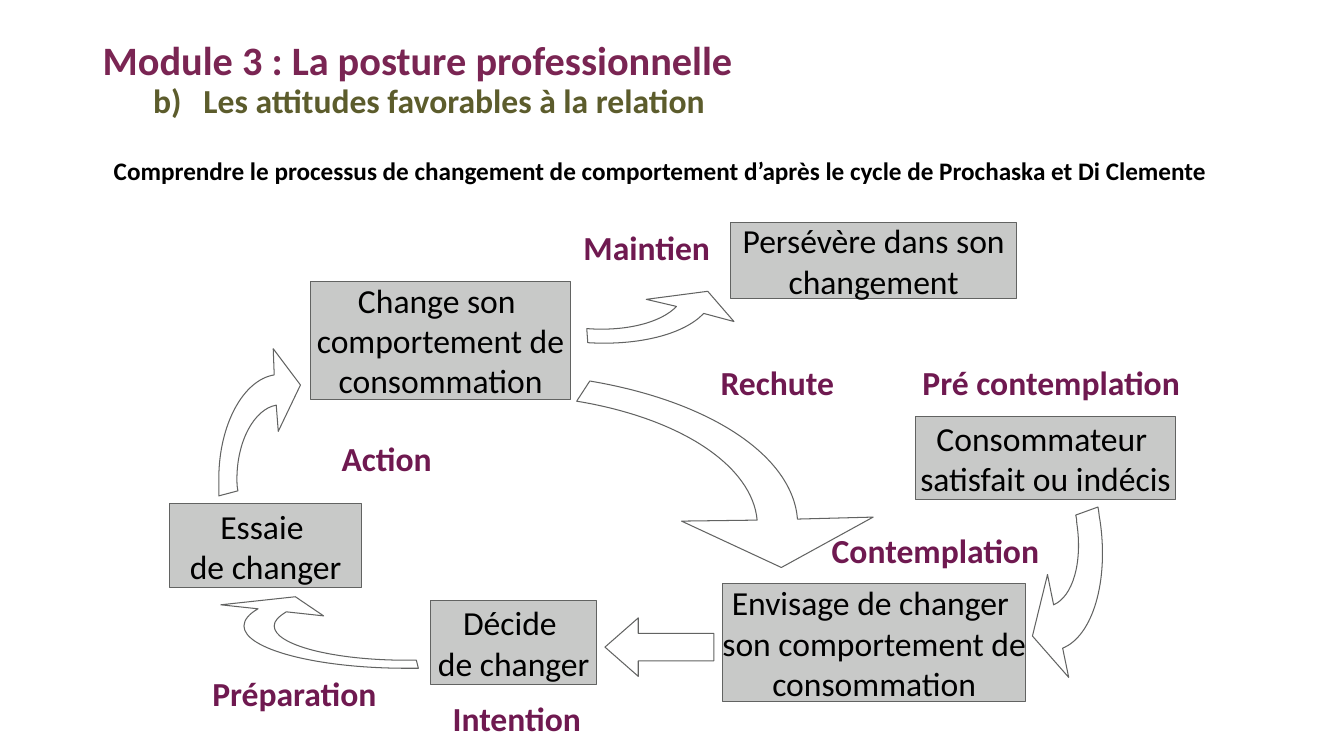
from dataclasses import dataclass

from lxml import etree
from pptx import Presentation
from pptx.dml.color import RGBColor
from pptx.enum.shapes import MSO_SHAPE
from pptx.enum.text import MSO_ANCHOR, MSO_AUTO_SIZE, PP_ALIGN
from pptx.oxml.ns import qn
from pptx.util import Inches, Pt

RECTANGLE = MSO_SHAPE.RECTANGLE
LEFT_ARROW = MSO_SHAPE.LEFT_ARROW
TOP = MSO_ANCHOR.TOP
MIDDLE = MSO_ANCHOR.MIDDLE
CENTER = PP_ALIGN.CENTER
LEFT = PP_ALIGN.LEFT
GROW = MSO_AUTO_SIZE.SHAPE_TO_FIT_TEXT
FIXED = MSO_AUTO_SIZE.NONE

FONT = "Calibri"
COLORS = {
    "box": "C8C9C8",
    "outline": "626362",
    "white": "FFFFFF",
    "black": "000000",
    "stage": "6F1950",
    "title": "7A2553",
    "subtitle": "5C5C2C",
}


@dataclass(frozen=True)
class StateBox:
    left: float
    top: float
    width: float
    height: float
    paragraphs: tuple[str, ...]


@dataclass(frozen=True)
class Label:
    left: float
    top: float
    width: float
    height: float
    text: str
    color: str = "stage"
    size: float = 24
    alignment: PP_ALIGN = CENTER
    anchor: MSO_ANCHOR = MIDDLE
    wrap: bool = False
    auto_size: MSO_AUTO_SIZE = FIXED
    line_spacing: float | None = None


@dataclass(frozen=True)
class CurvedArrow:
    start: tuple[float, float]
    steps: tuple[tuple[float, ...], ...]
    fill: str | None = "white"


STATE_BOXES = (
    StateBox(9.08, 4.13, 2.58, 0.83, ("Consommateur ", "satisfait ou indécis")),
    StateBox(7.17, 5.79, 3, 1.17,
             ("Envisage de changer ", "son comportement de", "consommation")),
    StateBox(4.27, 5.96, 1.65, 0.83, ("Décide \vde changer",)),
    StateBox(1.68, 5, 1.91, 0.83, ("Essaie \vde changer",)),
    StateBox(3.08, 2.79, 2.58, 1.17,
             ("Change son ", "comportement de", "consommation")),
    StateBox(7.25, 2.21, 2.83, 0.75, ("Persévère dans son", "changement")),
)

CURVED_ARROWS = (
    CurvedArrow((10.45, 6), (
        (10.64, 5.92, 10.74, 5.58, 10.68, 5.19),
        (10.68, 5.17, 10.68, 5.14, 10.67, 5.11),
        (10.89, 5.03),
        (10.9, 5.07, 10.9, 5.12, 10.91, 5.16),
        (11, 5.76, 10.84, 6.31, 10.54, 6.43),
        (10.6, 6.72), (10.24, 6.31), (10.39, 5.7),
    ), fill=None),
    CurvedArrow((2.84, 6.07), (
        (2.76, 6.12, 2.72, 6.16, 2.72, 6.21),
        (2.72, 6.4, 3.31, 6.55, 4.03, 6.55),
        (4.07, 6.55, 4.1, 6.55, 4.13, 6.55),
        (4.15, 6.63),
        (4.11, 6.63, 4.07, 6.63, 4.03, 6.63),
        (3.14, 6.63, 2.42, 6.44, 2.42, 6.21),
        (2.42, 6.15, 2.47, 6.09, 2.56, 6.04),
        (2.19, 6), (2.93, 5.92), (3.21, 6.11),
    )),
    CurvedArrow((2.74, 4.02), (
        (2.52, 4.06, 2.35, 4.38, 2.35, 4.75),
        (2.35, 4.79, 2.35, 4.83, 2.36, 4.87),
        (2.17, 4.92),
        (2.17, 4.86, 2.17, 4.81, 2.17, 4.75),
        (2.17, 4.22, 2.41, 3.77, 2.72, 3.72),
        (2.71, 3.46), (2.98, 3.82), (2.76, 4.28),
    )),
    CurvedArrow((7.51, 5.16), (
        (7.46, 4.62, 6.75, 4.15, 5.72, 3.98),
        (5.85, 3.78),
        (7.04, 3.98, 7.86, 4.52, 7.91, 5.15),
        (8.66, 5.13), (7.75, 5.63), (6.76, 5.17),
    )),
    CurvedArrow((6.71, 3.04), (
        (6.56, 3.2, 6.21, 3.29, 5.82, 3.26),
        (5.83, 3.4),
        (6.33, 3.43, 6.78, 3.32, 6.98, 3.11),
        (7.28, 3.19), (7.02, 2.89), (6.41, 2.97),
    )),
)

STAGE_LABELS = (
    Label(6.25, 3.63, 2.92, 0.33, "Rechute"),
    Label(7.82, 5.29, 2.84, 0.33, " Contemplation"),
    Label(4.42, 6.96, 1.41, 0.33, "Intention"),
    Label(1.92, 6.71, 2, 0.33, "Préparation"),
    Label(2.93, 4.38, 1.81, 0.33, "Action"),
    Label(5.75, 2.29, 1.33, 0.33, "Maintien"),
    Label(9.05, 3.54, 3.45, 0.5, "Pré contemplation",
          alignment=LEFT, anchor=TOP, wrap=True, auto_size=GROW),
)
SUBTITLE = Label(1.03, 0.79, 11.5, 0.71, "Les attitudes favorables à la relation",
                 "subtitle", 24, LEFT, TOP, True, line_spacing=0.9)
TITLE = Label(0.92, 0.4, 11.5, 0.49, "Module 3 : La posture professionnelle",
              "title", 28.8, LEFT, MIDDLE, True, line_spacing=0.7)
STATEMENT = Label(1.03, 1.49, 12.1, 0.4,
                  "Comprendre le processus de changement de comportement "
                  "d’après le cycle de Prochaska et Di Clemente",
                  "black", 18, LEFT, TOP, True, GROW)


def color(name: str) -> RGBColor:
    return RGBColor.from_string(COLORS[name])


def style_shape(shape, fill: str | None) -> None:
    shape.shadow.inherit = False
    if fill is None:
        shape.fill.background()
    else:
        shape.fill.solid()
        shape.fill.fore_color.rgb = color(fill)
    shape.line.color.rgb = color("outline")
    shape.line.width = Pt(0.75)


def write_line(paragraph, text: str, size: float, color_name: str, bold: bool) -> None:
    for index, part in enumerate(text.split("\v")):
        if index:
            paragraph.add_line_break()
        run = paragraph.add_run()
        run.text = part
        run.font.name = FONT
        run.font.size = Pt(size)
        run.font.bold = bold
        run.font.color.rgb = color(color_name)


def add_state_box(slide, box: StateBox) -> None:
    shape = slide.shapes.add_shape(RECTANGLE, Inches(box.left), Inches(box.top),
                                   Inches(box.width), Inches(box.height))
    style_shape(shape, "box")
    frame = shape.text_frame
    frame.word_wrap = False
    frame.vertical_anchor = MIDDLE
    for index, text in enumerate(box.paragraphs):
        paragraph = frame.add_paragraph() if index else frame.paragraphs[0]
        paragraph.alignment = CENTER
        write_line(paragraph, text, 24, "black", False)


def add_curved_arrow(slide, arrow: CurvedArrow) -> None:
    points = [(Inches(x), Inches(y)) for step in arrow.steps
              for x, y in zip(step[::2], step[1::2])]
    builder = slide.shapes.build_freeform(Inches(arrow.start[0]), Inches(arrow.start[1]))
    builder.add_line_segments(points, close=True)
    shape = builder.convert_to_shape()
    segments = iter(list(shape.element.iter(qn("a:lnTo"))))
    for step in arrow.steps:
        segment = next(segments)
        if len(step) == 6:
            segment.tag = qn("a:cubicBezTo")
            for _ in range(2):
                control = next(segments)
                segment.append(control[0])
                control.getparent().remove(control)
    style_shape(shape, arrow.fill)


def add_label(slide, label: Label):
    shape = slide.shapes.add_textbox(Inches(label.left), Inches(label.top),
                                     Inches(label.width), Inches(label.height))
    frame = shape.text_frame
    frame.word_wrap = label.wrap
    frame.auto_size = label.auto_size
    frame.vertical_anchor = label.anchor
    paragraph = frame.paragraphs[0]
    paragraph.alignment = label.alignment
    if label.line_spacing:
        paragraph.line_spacing = label.line_spacing
    write_line(paragraph, label.text, label.size, label.color, True)
    return paragraph


def number_paragraph(paragraph, start: int) -> None:
    properties = paragraph._p.get_or_add_pPr()
    properties.set("marL", str(Inches(0.89)))
    properties.set("indent", str(Inches(-0.5)))
    etree.SubElement(properties, qn("a:buAutoNum"), type="alphaLcParenR", startAt=str(start))


def main() -> None:
    presentation = Presentation()
    presentation.slide_width = Inches(13.33)
    presentation.slide_height = Inches(7.5)
    slide = presentation.slides.add_slide(presentation.slide_layouts[6])
    for box in STATE_BOXES:
        add_state_box(slide, box)
    for arrow in CURVED_ARROWS:
        add_curved_arrow(slide, arrow)
    straight_arrow = slide.shapes.add_shape(LEFT_ARROW, Inches(6), Inches(6.13),
                                            Inches(1.08), Inches(0.58))
    straight_arrow.adjustments[0] = 0.47
    straight_arrow.adjustments[1] = 0.57
    style_shape(straight_arrow, "white")
    for label in (*STAGE_LABELS, TITLE, STATEMENT):
        add_label(slide, label)
    number_paragraph(add_label(slide, SUBTITLE), 2)
    presentation.save("out.pptx")


if __name__ == "__main__":
    main()
